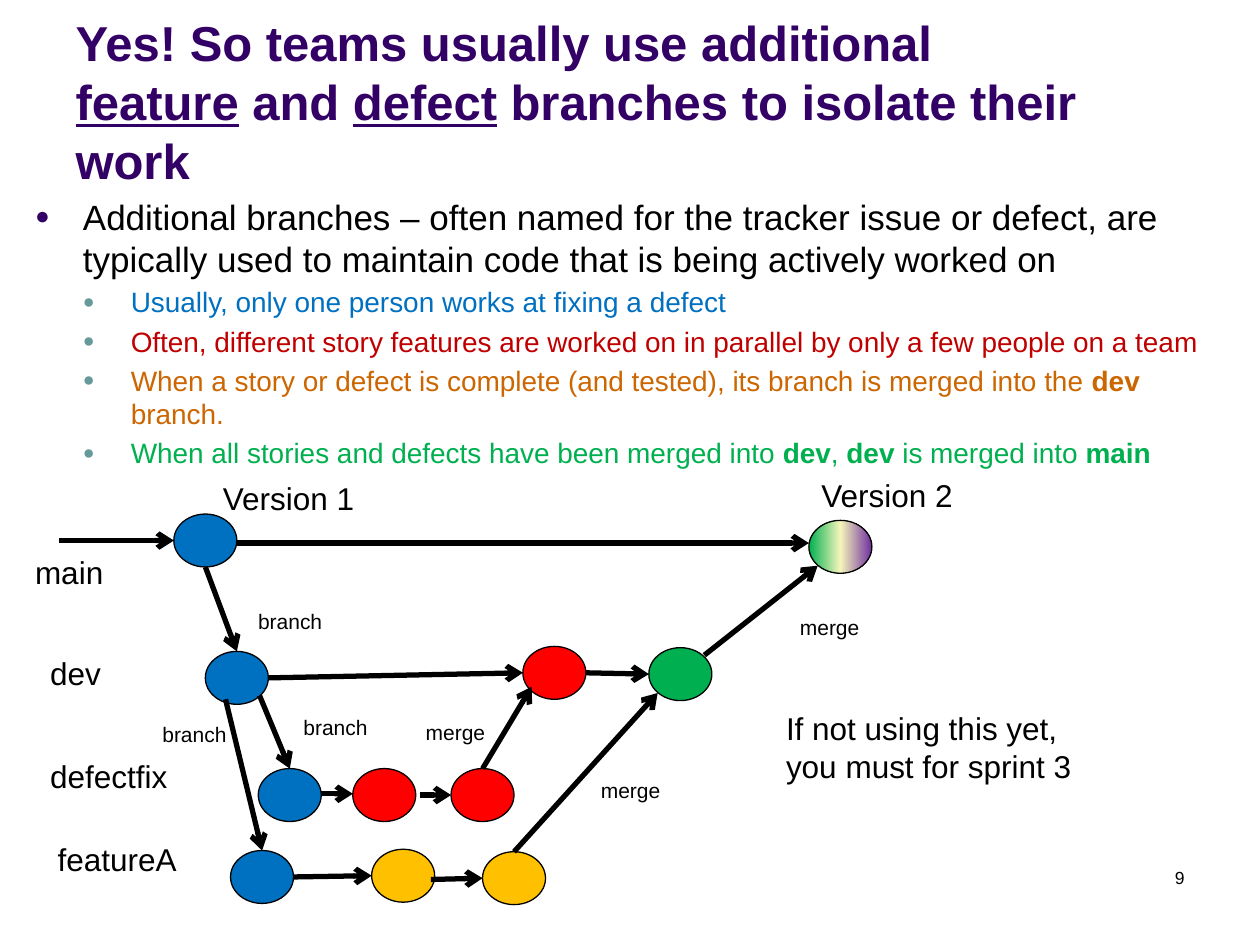
from copy import deepcopy

from pptx import Presentation
from pptx import util as u
from pptx.dml.color import RGBColor
from pptx.enum import shapes, text
from pptx.oxml import ns, xmlchemy

BLACK = RGBColor(0x00, 0x00, 0x00)
PURPLE = RGBColor(0x33, 0x00, 0x66)
TEAL = RGBColor(0x66, 0x99, 0x99)
BLUE = RGBColor(0x00, 0x70, 0xC0)
DARK_RED = RGBColor(0xC0, 0x00, 0x00)
ORANGE = RGBColor(0xCC, 0x66, 0x00)
GREEN = RGBColor(0x00, 0xB0, 0x50)
RED = RGBColor(0xFF, 0x00, 0x00)
AMBER = RGBColor(0xFF, 0xC0, 0x00)
CREAM = RGBColor(0xF5, 0xF5, 0xBA)
VIOLET = RGBColor(0x70, 0x30, 0xA0)


def add_spans(para, pieces, size, color, accent=None):
    for number, piece in enumerate(pieces):
        span = para.add_run()
        span.text = piece
        formats = {"name": "Arial", "size": u.Pt(size)}
        if accent:
            formats[accent] = number % 2 == 1
        for name, value in formats.items():
            setattr(span.font, name, value)
        span.font.color.rgb = color


def add_box(left, top, width, height, wrap=True):
    box = slide.shapes.add_textbox(*map(u.Inches, (left, top, width, height)))
    box.text_frame.word_wrap = wrap
    return box.text_frame


deck = Presentation()
deck.slide_width, deck.slide_height = u.Inches(10), u.Inches(7.5)
slide = deck.slides.add_slide(deck.slide_layouts[5])

title = slide.shapes.title
placement = {"left": 0.5, "top": 0.13, "width": 8.25, "height": 1.42}
for name, value in placement.items():
    setattr(title, name, u.Inches(value))
frame = title.text_frame
for name, value in {"word_wrap": True, "auto_size": text.MSO_AUTO_SIZE.NONE,
                    "vertical_anchor": text.MSO_ANCHOR.BOTTOM}.items():
    setattr(frame, name, value)
para = frame.paragraphs[0]
para.alignment = text.PP_ALIGN.LEFT
add_spans(para, ["Yes! So teams usually use additional ", "feature", " and ", "defect",
                 " branches to isolate their work"], 28, PURPLE, "underline")
for span in para.runs:
    span.font.bold = True

points = [
    (0, BLACK, ["Additional branches – often named for the tracker issue or defect, are "
                "typically used to maintain code that is being actively worked on"]),
    (1, BLUE, ["Usually, only one person works at fixing a defect"]),
    (1, DARK_RED, ["Often, different story features are worked on in parallel "
                   "by only a few people on a team"]),
    (1, ORANGE, ["When a story or defect is complete (and tested), its branch is "
                 "merged into the ", "dev", " branch."]),
    (1, GREEN, ["When all stories and defects have been merged into ", "dev", ", ", "dev",
                " is merged into ", "main"]),
]
frame = add_box(0.18, 1.5, 9.66, 2.42)
for number, (level, color, pieces) in enumerate(points):
    para = frame.add_paragraph() if number else frame.paragraphs[0]
    para.level = level
    size = 16 if level else 20
    if number:
        para.space_before = u.Pt(0.2 * size)
    properties = para._p.get_or_add_pPr()
    properties.set("marL", str(u.Inches(0.38 * (level + 1))))
    properties.set("indent", str(u.Inches(-0.38)))
    bullet_color = xmlchemy.OxmlElement("a:buClr")
    rgb = xmlchemy.OxmlElement("a:srgbClr")
    rgb.set("val", str(TEAL if level else PURPLE))
    bullet_color.append(rgb)
    properties.append(bullet_color)
    for tag, key, value in [("a:buSzPct", "val", "70000"), ("a:buFont", "typeface", "Arial"),
                            ("a:buChar", "char", "●")]:
        element = xmlchemy.OxmlElement(tag)
        element.set(key, value)
        properties.append(element)
    add_spans(para, pieces, size, color, "bold")

commits = [
    (1.38, 4.08, BLUE), (6.42, 4.13, None),
    (1.63, 5.17, BLUE), (4.15, 5.13, RED), (5.15, 5.14, GREEN),
    (2.05, 6.1, BLUE), (2.8, 6.1, RED), (3.58, 6.1, RED),
    (1.83, 6.75, BLUE), (2.95, 6.74, AMBER), (3.83, 6.76, AMBER),
]
for left, top, color in commits:
    commit = slide.shapes.add_shape(shapes.MSO_SHAPE.OVAL, u.Inches(left), u.Inches(top),
                                    u.Inches(0.5), u.Inches(0.42))
    commit.shadow.inherit = False
    commit.line.color.rgb = BLACK
    commit.line.width = u.Pt(0.75)
    if color:
        commit.fill.solid()
        commit.fill.fore_color.rgb = color
        continue
    commit.fill.gradient()
    commit.fill.gradient_angle = 0
    stop_list = commit._element.spPr.find(".//" + ns.qn("a:gsLst"))
    stop_list.insert(1, deepcopy(stop_list[0]))
    for stop, position, shade in zip(commit.fill.gradient_stops, (0, 0.5, 1),
                                     (GREEN, CREAM, VIOLET)):
        stop.position = position
        stop.color.rgb = shade

arrows = [
    (0.47, 4.29, 1.38, 4.29), (1.88, 4.31, 6.42, 4.31), (1.63, 4.5, 1.88, 5.17),
    (5.59, 5.2, 6.49, 4.49), (2.13, 5.38, 4.15, 5.34), (4.65, 5.34, 5.15, 5.35),
    (2.06, 5.52, 2.3, 6.1), (2.55, 6.3, 2.8, 6.3), (3.33, 6.31, 3.58, 6.31),
    (3.83, 6.1, 4.22, 5.45), (1.79, 5.55, 2.08, 6.75), (2.33, 6.96, 2.95, 6.95),
    (3.42, 6.98, 3.83, 6.97), (4.08, 6.76, 5.22, 5.5),
]
for ends in arrows:
    arrow = slide.shapes.add_connector(shapes.MSO_CONNECTOR.STRAIGHT, *map(u.Inches, ends))
    arrow.line.color.rgb = BLACK
    arrow.line.width = u.Pt(3)
    head = xmlchemy.OxmlElement("a:tailEnd")
    head.set("type", "arrow")
    arrow.line._get_or_add_ln().append(head)
    arrow._element.spPr.append(xmlchemy.OxmlElement("a:effectLst"))

labels = [
    ("Version 1", 1.67, 3.75, 1.25, 18), ("Version 2", 6.42, 3.73, 1.25, 18),
    ("main", 0.18, 4.34, 0.75, 18), ("dev", 0.3, 5.14, 0.61, 18),
    ("defectfix", 0.3, 5.96, 1.14, 18), ("featureA", 0.36, 6.62, 1.16, 18),
    ("branch", 1.95, 4.78, 0.71, 12), ("branch", 2.31, 5.62, 0.71, 12),
    ("branch", 1.19, 5.68, 0.71, 12), ("merge", 6.25, 4.83, 0.68, 12),
    ("merge", 3.28, 5.66, 0.68, 12), ("merge", 4.67, 6.12, 0.68, 12),
]
for label, left, top, width, size in labels:
    frame = add_box(left, top, width, 0.4 if size == 18 else 0.3, wrap=False)
    add_spans(frame.paragraphs[0], [label], size, BLACK)

frame = add_box(6.14, 5.58, 3.2, 0.71)
add_spans(frame.paragraphs[0], ["If not using this yet,"], 18, BLACK)
add_spans(frame.add_paragraph(), ["you must for sprint 3"], 18, BLACK)

para = add_box(7.17, 6.83, 2.33, 0.5).paragraphs[0]
para.alignment = text.PP_ALIGN.RIGHT
add_spans(para, ["9"], 10, BLACK)

deck.save("out.pptx")
